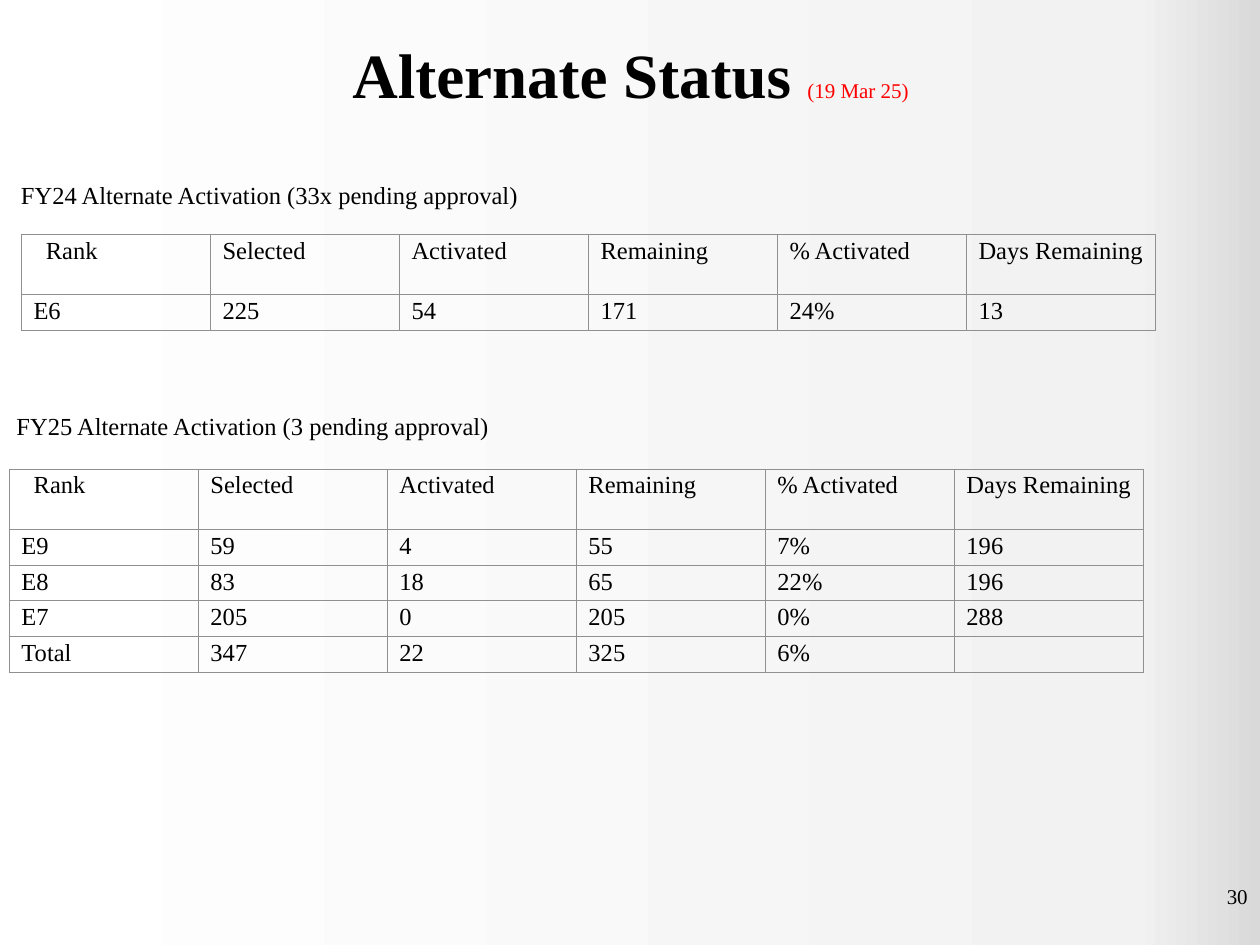
from copy import deepcopy
from lxml.etree import SubElement as Sub
from pptx import Presentation as Deck
from pptx.dml.color import RGBColor as RGB
from pptx.enum.text import MSO_ANCHOR as Anchor, MSO_AUTO_SIZE as Fit, PP_ALIGN as Align
from pptx.oxml.ns import qn
from pptx.util import Pt

BLACK = RGB(0x00, 0x00, 0x00)
RED = RGB(0xFF, 0x00, 0x00)
GRID = RGB(0x90, 0x90, 0x90)
STOPS = [(0, RGB(0xFF, 0xFF, 0xFF)), (0.9, RGB(0xF2, 0xF2, 0xF2)), (1, RGB(0xD9, 0xD9, 0xD9))]
FACE = "Times New Roman"
HEAD = ["Rank", "Selected", "Activated", "Remaining", "% Activated", "Days Remaining"]
FY24 = [["E6", "225", "54", "171", "24%", "13"]]
FY25 = [
    ["E9", "59", "4", "55", "7%", "196"],
    ["E8", "83", "18", "65", "22%", "196"],
    ["E7", "205", "0", "205", "0%", "288"],
    ["Total", "347", "22", "325", "6%", ""],
]


def style(run, size, color=BLACK, bold=False):
    font = run.font
    font.name, font.size, font.bold = FACE, Pt(size), bold
    font.color.rgb = color


def add_back(slide):
    fill = slide.background.fill
    fill.gradient()
    fill.gradient_angle = 0
    stops = slide.element.find(".//" + qn("a:gsLst"))
    stops.append(deepcopy(stops[-1]))
    for stop, (place, color) in zip(fill.gradient_stops, STOPS):
        stop.position = place
        stop.color.rgb = color


def add_title(slide, text, date):
    title = slide.shapes.title
    title.left, title.top, title.width, title.height = Pt(29.5), Pt(0), Pt(661.7), Pt(84.2)
    frame = title.text_frame
    frame.auto_size = Fit.NONE
    frame.vertical_anchor = Anchor.MIDDLE
    para = frame.paragraphs[0]
    para.alignment = Align.CENTER
    for part, look in ((text, (36, BLACK, True)), (date, (12, RED))):
        run = para.add_run()
        run.text = part
        style(run, *look)


def add_text(slide, text, left, top, width, size, align=Align.LEFT):
    frame = slide.shapes.add_textbox(Pt(left), Pt(top), Pt(width), Pt(20)).text_frame
    frame.word_wrap = True
    frame.margin_left = frame.margin_right = frame.margin_top = frame.margin_bottom = 0
    frame.vertical_anchor = Anchor.MIDDLE
    frame.text = text
    para = frame.paragraphs[0]
    para.alignment = align
    style(para.runs[0], size)


def add_edges(cell):
    props = cell._tc.get_or_add_tcPr()
    for spot, side in enumerate(("lnL", "lnR", "lnT", "lnB")):
        line = Sub(props, qn("a:" + side), w=str(Pt(0.6)))
        Sub(Sub(line, qn("a:solidFill")), qn("a:srgbClr"), val=str(GRID))
        props.insert(spot, line)


def fill_cell(cell, text):
    cell.fill.background()
    add_edges(cell)
    cell.margin_left = Pt(14 if text == "Rank" else 7)
    cell.margin_right = Pt(7)
    cell.margin_top = cell.margin_bottom = Pt(1.8)
    para = cell.text_frame.paragraphs[0]
    if text:
        para.text = text
        style(para.runs[0], 14)
    else:
        Sub(para._p, qn("a:endParaRPr"), sz="1400")


def add_grid(slide, data, left, top):
    rows = [HEAD] + data
    high = 34.6 + 19.1 * len(data)
    table = slide.shapes.add_table(
        len(rows), len(HEAD), Pt(left), Pt(top), Pt(648), Pt(high)).table
    table.first_row = table.horz_banding = False
    for col in table.columns:
        col.width = Pt(108)
    for num, (row, texts) in enumerate(zip(table.rows, rows)):
        row.height = Pt(19.1 if num else 34.6)
        for cell, text in zip(row.cells, texts):
            fill_cell(cell, text)


def main():
    deck = Deck()
    deck.slide_width, deck.slide_height = Pt(720), Pt(540)
    slide = deck.slides.add_slide(deck.slide_layouts[5])
    add_back(slide)
    add_title(slide, "Alternate Status ", "(19 Mar 25)")
    add_text(slide, "FY24 Alternate Activation (33x pending approval)", 12, 101.5, 300, 14)
    add_grid(slide, FY24, 12.2, 133.9)
    add_text(slide, "FY25 Alternate Activation (3 pending approval)", 9.4, 233, 300, 14)
    add_grid(slide, FY25, 5.3, 268)
    add_text(slide, "30", 552, 502, 161, 12, Align.RIGHT)
    deck.save("out.pptx")


if __name__ == "__main__":
    main()
